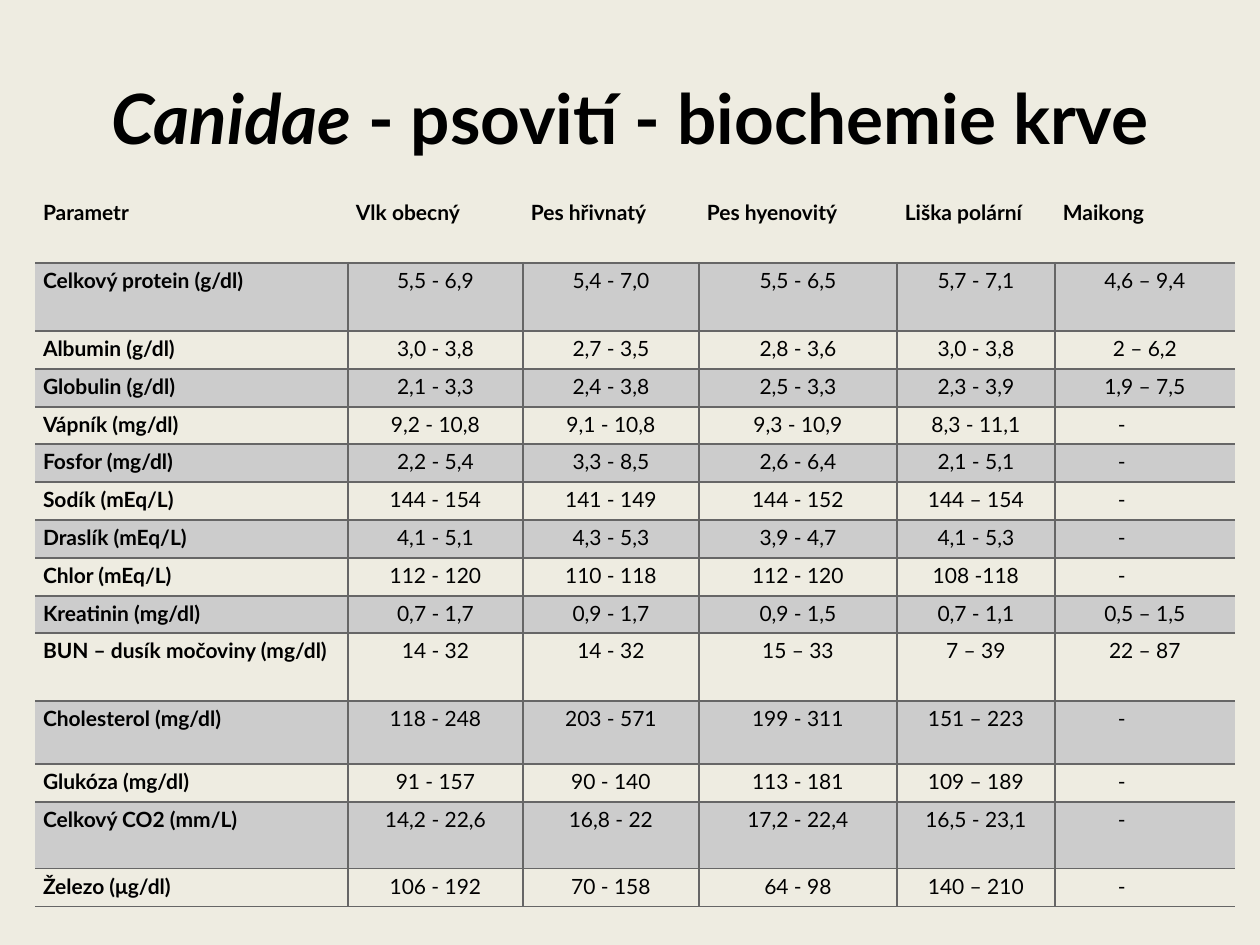
from dataclasses import dataclass

from lxml import etree
from pptx import Presentation
from pptx.dml.color import RGBColor
from pptx.enum.text import MSO_ANCHOR, PP_ALIGN
from pptx.oxml.ns import qn
from pptx.util import Emu, Pt

LEFT, CENTER = PP_ALIGN.LEFT, PP_ALIGN.CENTER
TOP, MIDDLE = MSO_ANCHOR.TOP, MSO_ANCHOR.MIDDLE
PX = 914400 / 126
SLIDE_SIZE = (1260, 945)
BLANK_LAYOUT = 6
NO_TABLE_STYLE = "{2D5ABB26-0587-4C30-8999-92F81FD0307C}"


@dataclass(frozen=True)
class Theme:
    font: str = "Lato"
    background: str = "EEECE1"
    ink: str = "000000"
    band: str = "CCCCCC"
    rule: str = "666666"
    title_size: float = 39.6
    table_size: float = 12
    rule_width: float = 1
    header_rule_width: float = 1.5


COLUMN_EDGES = [35, 348, 523, 699, 897, 1055, 1235]
ROW_EDGES = [195, 263, 331, 369, 407, 444, 482, 520,
             558, 596, 633, 701, 764, 802, 869, 907]
CELL_INSETS = (8, 1, 8, 0)
MISSING = "-"
MISSING_INSETS = (8, 1, 54, 0)

BLOOD_VALUES = [
    ["Parametr", "Vlk obecný", "Pes hřivnatý", "Pes hyenovitý", "Liška polární", "Maikong"],
    ["Celkový protein (g/dl)", "5,5 - 6,9", "5,4 - 7,0", "5,5 - 6,5", "5,7 - 7,1", "4,6 – 9,4"],
    ["Albumin (g/dl)", "3,0 - 3,8", "2,7 - 3,5", "2,8 - 3,6", "3,0 - 3,8", "2 – 6,2"],
    ["Globulin (g/dl)", "2,1 - 3,3", "2,4 - 3,8", "2,5 - 3,3", "2,3 - 3,9", "1,9 – 7,5"],
    ["Vápník (mg/dl)", "9,2 - 10,8", "9,1 - 10,8", "9,3 - 10,9", "8,3 - 11,1", MISSING],
    ["Fosfor (mg/dl)", "2,2 - 5,4", "3,3 - 8,5", "2,6 - 6,4", "2,1 - 5,1", MISSING],
    ["Sodík (mEq/L)", "144 - 154", "141 - 149", "144 - 152", "144 – 154", MISSING],
    ["Draslík (mEq/L)", "4,1 - 5,1", "4,3 - 5,3", "3,9 - 4,7", "4,1 - 5,3", MISSING],
    ["Chlor (mEq/L)", "112 - 120", "110 - 118", "112 - 120", "108 -118", MISSING],
    ["Kreatinin (mg/dl)", "0,7 - 1,7", "0,9 - 1,7", "0,9 - 1,5", "0,7 - 1,1", "0,5 – 1,5"],
    ["BUN – dusík močoviny (mg/dl)", "14 - 32", "14 - 32", "15 – 33", "7 – 39", "22 – 87"],
    ["Cholesterol (mg/dl)", "118 - 248", "203 - 571", "199 - 311", "151 – 223", MISSING],
    ["Glukóza (mg/dl)", "91 - 157", "90 - 140", "113 - 181", "109 – 189", MISSING],
    ["Celkový CO2 (mm/L)", "14,2 - 22,6", "16,8 - 22", "17,2 - 22,4", "16,5 - 23,1", MISSING],
    ["Železo (μg/dl)", "106 - 192", "70 - 158", "64 - 98", "140 – 210", MISSING],
]


def px(length):
    return Emu(round(length * PX))


def gaps(edges):
    return [end - start for start, end in zip(edges, edges[1:])]


def add_text(para, text, *, font, size, color, bold=False, italic=False):
    span = para.add_run()
    span.text = text
    span.font.name = font
    span.font.size = Pt(size)
    span.font.color.rgb = RGBColor.from_string(color)
    span.font.bold = bold
    span.font.italic = italic


def add_border(cell, side, color, width):
    """Draw one side (L, R, T or B) of a cell; a width of 0 hides it."""
    line = etree.SubElement(cell._tc.get_or_add_tcPr(), qn(f"a:ln{side}"), w=str(Pt(width)))
    if width:
        fill = etree.SubElement(line, qn("a:solidFill"))
        etree.SubElement(fill, qn("a:srgbClr"), val=color)
    else:
        etree.SubElement(line, qn("a:noFill"))


class SlideBuilder:
    def __init__(self, deck, theme):
        self.theme = theme
        self.slide = deck.slides.add_slide(deck.slide_layouts[BLANK_LAYOUT])
        background = self.slide.background.fill
        background.solid()
        background.fore_color.rgb = RGBColor.from_string(theme.background)

    def title(self, left, top, width, height, spans):
        box = self.slide.shapes.add_textbox(px(left), px(top), px(width), px(height))
        frame = box.text_frame
        frame.word_wrap = True
        frame.vertical_anchor = MIDDLE
        para = frame.paragraphs[0]
        para.alignment = CENTER
        for text, italic in spans:
            add_text(para, text, font=self.theme.font, size=self.theme.title_size,
                     color=self.theme.ink, bold=True, italic=italic)

    def table(self, rows, column_edges, row_edges):
        left, top = column_edges[0], row_edges[0]
        frame = self.slide.shapes.add_table(
            len(rows), len(rows[0]), px(left), px(top),
            px(column_edges[-1] - left), px(row_edges[-1] - top))
        table = frame.table
        table.first_row = table.horz_banding = False
        table._tbl.tblPr.find(qn("a:tableStyleId")).text = NO_TABLE_STYLE
        for column, width in zip(table.columns, gaps(column_edges)):
            column.width = px(width)
        for row, height in zip(table.rows, gaps(row_edges)):
            row.height = px(height)
        for row_index, texts in enumerate(rows):
            for column_index, text in enumerate(texts):
                cell = table.cell(row_index, column_index)
                self.cell_text(cell, text, row_index, column_index)
                self.cell_frame(cell, row_index, column_index, len(texts) - 1)

    def cell_text(self, cell, text, row, column):
        insets = MISSING_INSETS if text == MISSING else CELL_INSETS
        (cell.margin_left, cell.margin_top,
         cell.margin_right, cell.margin_bottom) = map(px, insets)
        cell.vertical_anchor = TOP
        is_label = row == 0 or column == 0
        para = cell.text_frame.paragraphs[0]
        para.alignment = LEFT if is_label else CENTER
        para.line_spacing = 1.15
        para.space_after = Pt(8)
        add_text(para, text, font=self.theme.font, size=self.theme.table_size,
                 color=self.theme.ink, bold=is_label)

    def cell_frame(self, cell, row, column, last_column):
        """Rule the inside of the body, and shade every other row."""
        theme = self.theme
        thin, thick = theme.rule_width, theme.header_rule_width
        widths = {
            "L": thin if row and column else 0,
            "R": thin if row and column < last_column else 0,
            "T": (0, thick)[row] if row < 2 else thin,
            "B": thin if row else thick,
        }
        for side, width in widths.items():
            add_border(cell, side, theme.rule, width)
        if row % 2:
            cell.fill.solid()
            cell.fill.fore_color.rgb = RGBColor.from_string(theme.band)
        else:
            cell.fill.background()


def main():
    deck = Presentation()
    deck.slide_width, deck.slide_height = map(px, SLIDE_SIZE)
    builder = SlideBuilder(deck, Theme())
    builder.title(63, 38, 1134, 157,
                  [("Canidae", True), (" - psovití - biochemie krve", False)])
    builder.table(BLOOD_VALUES, COLUMN_EDGES, ROW_EDGES)
    deck.save("out.pptx")


if __name__ == "__main__":
    main()
